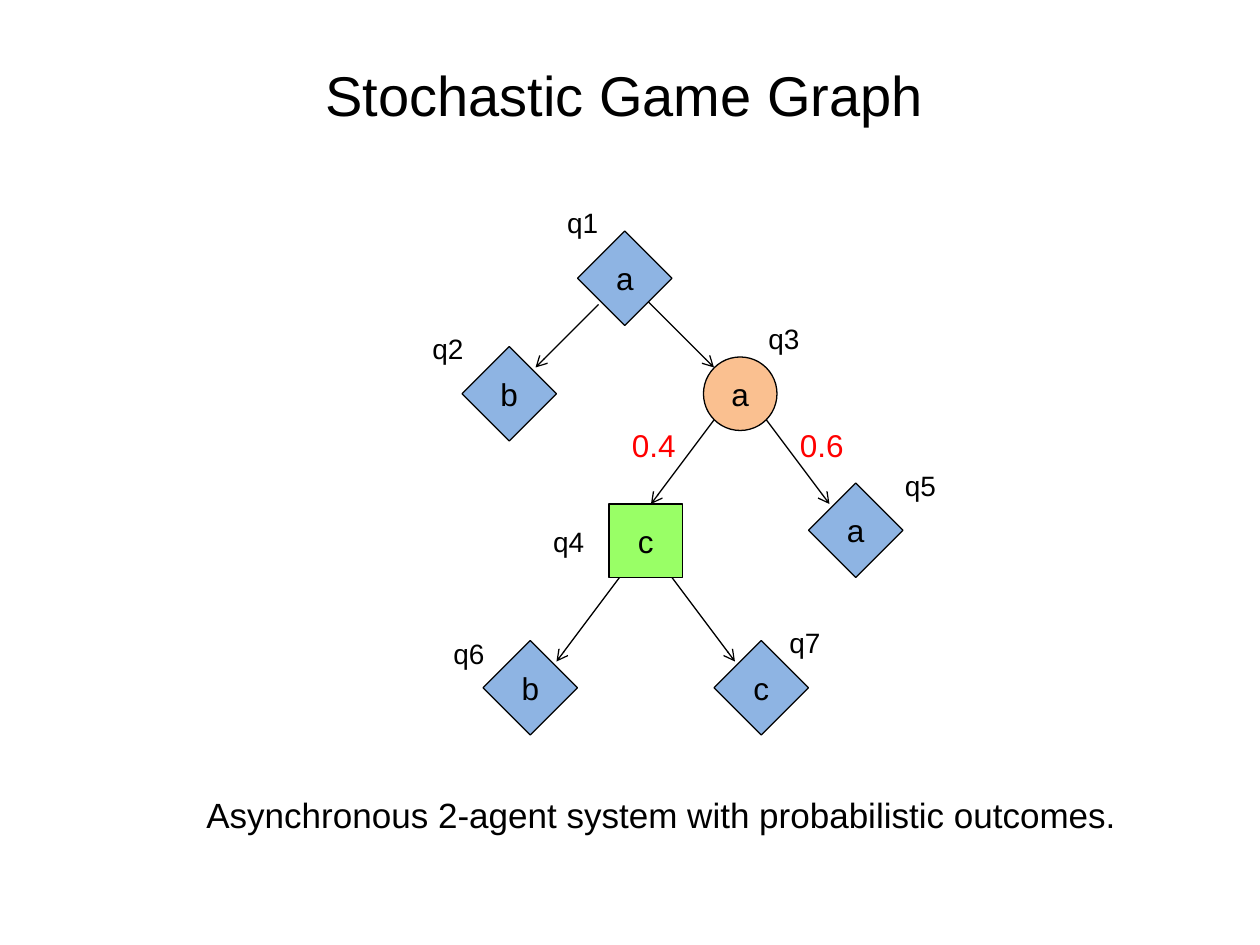
import pptx
import pptx.util
import pptx.dml.color
import pptx.enum.shapes
import pptx.enum.text
import pptx.oxml
import pptx.oxml.ns

Pt = pptx.util.Pt
Shape = pptx.enum.shapes.MSO_SHAPE
Align = pptx.enum.text.PP_ALIGN
Anchor = pptx.enum.text.MSO_ANCHOR
Fit = pptx.enum.text.MSO_AUTO_SIZE

THEME = {
    "font": "Arial",
    "ink": "000000", "probability": "FF0000",
    "agent_one": "8EB4E3", "agent_two": "99FF66", "chance": "FAC090",
    "title_size": 32, "caption_size": 20, "node_size": 18, "label_size": 16,
    "line": 0.75,
}
KINDS = {
    "agent_one": (Shape.DIAMOND, 54),
    "agent_two": (Shape.RECTANGLE, 42),
    "chance": (Shape.OVAL, 42),
}

TITLE = ("Stochastic Game Graph", (-3, 31, 720, 46))
CAPTION = ("Asynchronous 2-agent system with probabilistic outcomes.", (108, 450, 540, 32))

# name, letter, kind, centre, label corner
NODES = [
    ("q1", "a", "agent_one", (357, 159), (312, 114)),
    ("q2", "b", "agent_one", (291, 225), (240, 186)),
    ("q3", "a", "chance", (423, 225), (432, 180)),
    ("q4", "c", "agent_two", (369, 309), (309, 296)),
    ("q5", "a", "agent_one", (489, 303), (510, 264)),
    ("q6", "b", "agent_one", (303, 393), (252, 360)),
    ("q7", "c", "agent_one", (435, 393), (444, 354)),
]
EDGES = [
    ((342, 174), (306, 210)),
    ((366, 168), (408, 210)),
    ((408, 240), (372, 288)),
    ((438, 240), (474, 288)),
    ((354, 330), (318, 378)),
    ((384, 330), (420, 378)),
]
PROBABILITIES = [("0.4", (354, 240)), ("0.6", (450, 240))]


def color(name):
    return pptx.dml.color.RGBColor.from_string(THEME[name])


def write(shape, text, size, ink="ink", align=Align.LEFT, anchor=Anchor.TOP, wrap=True):
    frame = shape.text_frame
    frame.word_wrap = wrap
    frame.auto_size = Fit.NONE
    frame.vertical_anchor = anchor
    para = frame.paragraphs[0]
    para.alignment = align
    span = para.add_run()
    span.text = text
    span.font.name = THEME["font"]
    span.font.size = Pt(THEME[size])
    span.font.color.rgb = color(ink)


def add_text(page, text, place, size, **style):
    box = page.shapes.add_textbox(*map(Pt, place))
    write(box, text, size, **style)


def add_edge(page, start, end):
    edge = page.shapes.add_connector(
        pptx.enum.shapes.MSO_CONNECTOR.STRAIGHT, *map(Pt, start + end))
    edge.line.color.rgb = color("ink")
    edge.line.width = Pt(THEME["line"])
    head = pptx.oxml.parse_xml(
        "<a:tailEnd %s type='arrow'/>" % pptx.oxml.ns.nsdecls("a"))
    edge.line._get_or_add_ln().append(head)
    edge._element.spPr.append(
        pptx.oxml.parse_xml("<a:effectLst %s/>" % pptx.oxml.ns.nsdecls("a")))


def add_node(page, letter, kind, centre):
    preset, size = KINDS[kind]
    left, top = (middle - size / 2 for middle in centre)
    node = page.shapes.add_shape(preset, Pt(left), Pt(top), Pt(size), Pt(size))
    node.shadow.inherit = False
    node.fill.solid()
    node.fill.fore_color.rgb = color(kind)
    node.line.color.rgb = color("ink")
    node.line.width = Pt(THEME["line"])
    write(node, letter, "node_size", align=Align.CENTER, anchor=Anchor.MIDDLE, wrap=False)


def main():
    deck = pptx.Presentation()
    deck.slide_width, deck.slide_height = Pt(720), Pt(540)
    page = deck.slides.add_slide(deck.slide_layouts[5])

    text, place = TITLE
    title = page.shapes.title
    title.left, title.top, title.width, title.height = map(Pt, place)
    write(title, text, "title_size", align=Align.CENTER)

    for start, end in EDGES:
        add_edge(page, start, end)
    for name, letter, kind, centre, corner in NODES:
        add_node(page, letter, kind, centre)
        add_text(page, name, corner + (42, 26.5), "label_size",
                 align=Align.CENTER if name == "q1" else Align.LEFT)
    for text, corner in PROBABILITIES:
        add_text(page, text, corner + (48, 29), "node_size", ink="probability")

    text, place = CAPTION
    add_text(page, text, place, "caption_size", align=Align.CENTER)
    deck.save("out.pptx")


if __name__ == "__main__":
    main()
